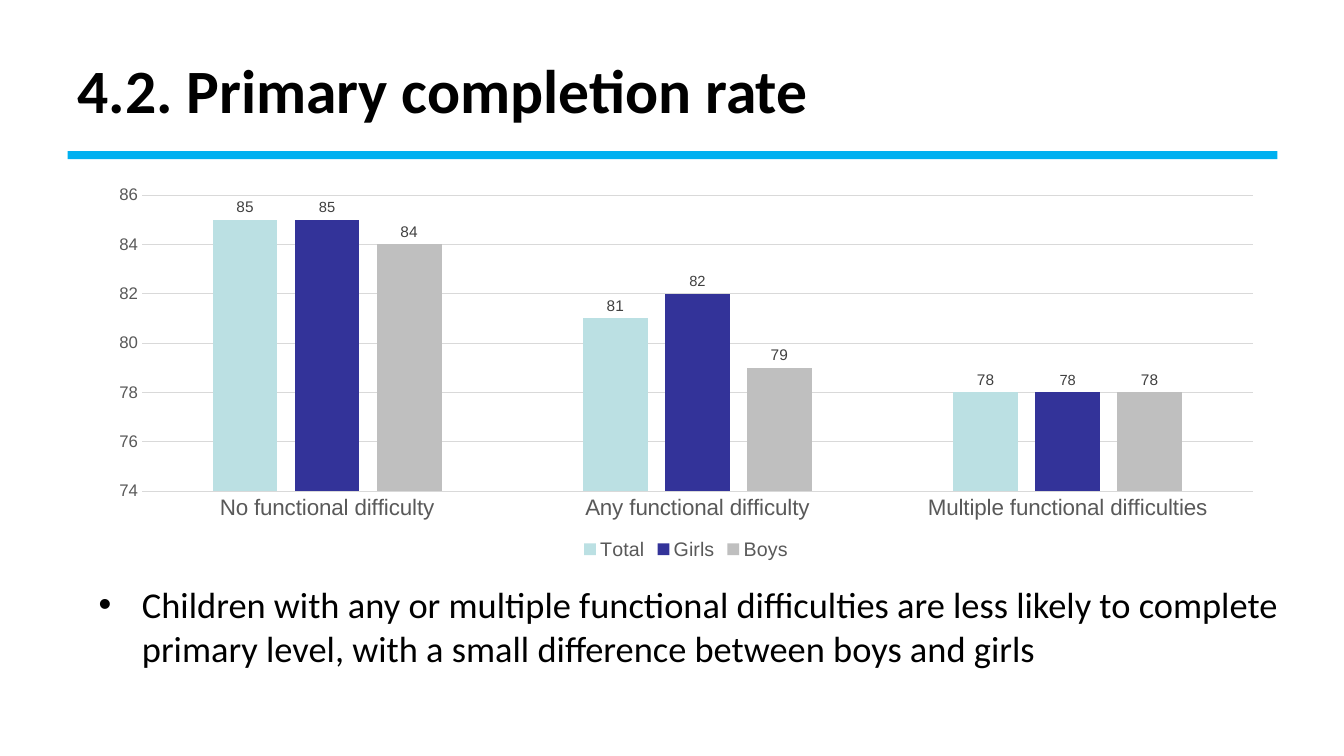
from dataclasses import dataclass

from lxml import etree
from pptx import Presentation
from pptx.chart.data import CategoryChartData
from pptx.dml.color import RGBColor
from pptx.enum.chart import XL_CHART_TYPE, XL_LABEL_POSITION, XL_LEGEND_POSITION, XL_TICK_MARK
from pptx.enum.shapes import MSO_SHAPE
from pptx.enum.text import MSO_ANCHOR
from pptx.oxml.ns import qn
from pptx.util import Inches, Pt


@dataclass(frozen=True)
class Theme:
    text_font: str = "Calibri"
    chart_font: str = "Arial"
    black: str = "000000"
    rule: str = "00B0F0"
    axis_text: str = "595959"
    label_text: str = "404040"
    grid: str = "D9D9D9"
    title_size: float = 44
    body_size: float = 26
    category_size: float = 16
    legend_size: float = 14
    value_size: float = 12
    chart_size: float = 10


THEME = Theme()
CATEGORIES = ["No functional difficulty", "Any functional difficulty",
              "Multiple functional difficulties"]
# Name, completion rates, bar colour, label size
SERIES = [
    ("Total", (85, 81, 78), "BBE0E3", 11),
    ("Girls", (85, 82, 78), "333399", 10.5),
    ("Boys", (84, 79, 78), "BFBFBF", 11),
]


def style_font(font, name, size, color, bold=False):
    font.name = name
    font.size = Pt(size)
    font.bold = bold
    font.color.rgb = RGBColor.from_string(color)


def style_line(line, color):
    line.color.rgb = RGBColor.from_string(color)
    line.width = Pt(0.75)


def set_bullet(para, indent, hanging):
    properties = para._p.get_or_add_pPr()
    properties.set("marL", str(Inches(indent)))
    properties.set("indent", str(-Inches(hanging)))
    font = etree.SubElement(properties, qn("a:buFont"))
    font.set("typeface", THEME.chart_font)
    etree.SubElement(properties, qn("a:buChar")).set("char", "•")


def add_text(page, area, text, size, bold=False, anchor=MSO_ANCHOR.TOP, bullet=False):
    box = page.shapes.add_textbox(*map(Inches, area))
    frame = box.text_frame
    frame.word_wrap = True
    frame.vertical_anchor = anchor
    para = frame.paragraphs[0]
    if bullet:
        set_bullet(para, 0.5, 0.43)
    span = para.add_run()
    span.text = text
    style_font(span.font, THEME.text_font, size, THEME.black, bold)


def add_rule(page, area):
    rule = page.shapes.add_shape(MSO_SHAPE.RECTANGLE, *map(Inches, area))
    rule.shadow.inherit = False
    rule.fill.solid()
    rule.fill.fore_color.rgb = RGBColor.from_string(THEME.rule)
    rule.line.fill.background()


def style_axes(chart):
    category_axis, value_axis = chart.category_axis, chart.value_axis
    for axis, size in ((category_axis, THEME.category_size), (value_axis, THEME.value_size)):
        axis.major_tick_mark = axis.minor_tick_mark = XL_TICK_MARK.NONE
        style_font(axis.tick_labels.font, THEME.chart_font, size, THEME.axis_text)
    style_line(category_axis.format.line, THEME.grid)
    value_axis.format.line.fill.background()
    value_axis.minimum_scale, value_axis.maximum_scale = 74, 86
    value_axis.major_unit = 2
    style_line(value_axis.major_gridlines.format.line, THEME.grid)


def style_series(series, color, label_size):
    series.format.fill.solid()
    series.format.fill.fore_color.rgb = RGBColor.from_string(color)
    series.invert_if_negative = False
    labels = series.data_labels
    labels.show_value = True
    labels.position = XL_LABEL_POSITION.OUTSIDE_END
    labels.number_format = "0"
    labels.number_format_is_linked = False
    style_font(labels.font, THEME.chart_font, label_size, THEME.label_text)


def add_column_chart(page, area):
    data = CategoryChartData()
    data.categories = CATEGORIES
    for name, values, *_ in SERIES:
        data.add_series(name, values)
    chart = page.shapes.add_chart(
        XL_CHART_TYPE.COLUMN_CLUSTERED, *map(Inches, area), data).chart
    style_font(chart.font, THEME.chart_font, THEME.chart_size, THEME.black)
    chart.has_title = False
    style_axes(chart)

    plot = chart.plots[0]
    plot.gap_width, plot.overlap = 219, -27
    plot.vary_by_categories = False
    for series, (_, _, color, label_size) in zip(plot.series, SERIES):
        style_series(series, color, label_size)

    chart.has_legend = True
    chart.legend.position = XL_LEGEND_POSITION.BOTTOM
    chart.legend.include_in_layout = False
    style_font(chart.legend.font, THEME.chart_font, THEME.legend_size, THEME.axis_text)


def main():
    deck = Presentation()
    deck.slide_width, deck.slide_height = Inches(13.33), Inches(7.5)
    page = deck.slides.add_slide(deck.slide_layouts[6])

    # Heading
    add_rule(page, (0.67, 1.5, 12, 0.08))
    add_text(page, (0.67, 0.26, 12, 1.25), "4.2. Primary completion rate",
             THEME.title_size, bold=True, anchor=MSO_ANCHOR.MIDDLE)

    # Finding
    add_text(page, (0.81, 5.73, 12, 1.05),
             "Children with any or multiple functional difficulties are less likely to "
             "complete primary level, with a small difference between boys and girls",
             THEME.body_size, bullet=True)

    # Completion rates
    add_column_chart(page, (0.95, 1.77, 11.71, 3.83))

    deck.save("out.pptx")


if __name__ == "__main__":
    main()
